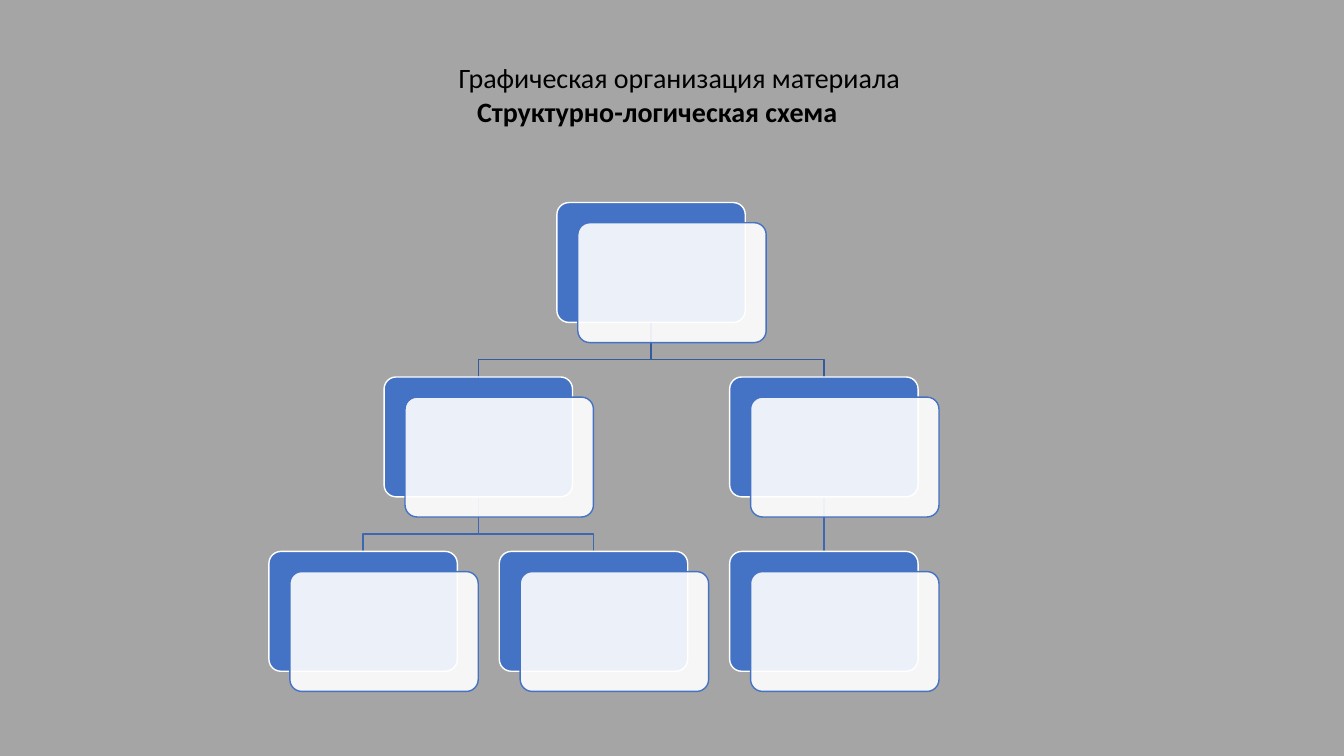
from dataclasses import dataclass

from lxml import etree
from pptx import Presentation
from pptx.dml.color import RGBColor
from pptx.enum.shapes import MSO_CONNECTOR, MSO_SHAPE
from pptx.enum.text import MSO_ANCHOR, PP_ALIGN
from pptx.oxml.ns import qn
from pptx.shapes.autoshape import Shape
from pptx.shapes.connector import Connector
from pptx.slide import Slide
from pptx.util import Pt

ROUNDED = MSO_SHAPE.ROUNDED_RECTANGLE
STRAIGHT = MSO_CONNECTOR.STRAIGHT
CENTER = PP_ALIGN.CENTER
TOP = MSO_ANCHOR.TOP

GREY = RGBColor(0xA5, 0xA5, 0xA5)
BLACK = RGBColor(0x00, 0x00, 0x00)
WHITE = RGBColor(0xFF, 0xFF, 0xFF)
BLUE = RGBColor(0x44, 0x72, 0xC4)
UPPER_LINK = RGBColor(0x36, 0x5B, 0x9D)
LOWER_LINK = RGBColor(0x3E, 0x67, 0xB2)

TREE_LEFT, TREE_TOP = 192.1, 144.7
COLUMN_STEP, ROW_STEP = 164.55, 124.6
NODE_WIDTH, NODE_HEIGHT = 134.6, 85.6
CARD_DX, CARD_DY = 14.95, 14.4
BEND_DROP = 26.5
LINE_WIDTH = Pt(1)
BOTTOM_SITE, TOP_SITE = 2, 0
BACK_INDEX = 2

TITLE_FONT = {"name": "Calibri", "size": Pt(20)}
TITLE_LINES = (
    ("\tГрафическая организация материала ", False),
    ("Структурно-логическая схема", True),
)


@dataclass(frozen=True)
class Node:
    """A place in the tree; column may be fractional."""
    column: float
    row: int

    @property
    def left(self) -> float:
        return TREE_LEFT + self.column * COLUMN_STEP

    @property
    def top(self) -> float:
        return TREE_TOP + self.row * ROW_STEP

    @property
    def middle(self) -> float:
        return self.left + NODE_WIDTH / 2

    @property
    def bottom(self) -> float:
        return self.top + NODE_HEIGHT


@dataclass(frozen=True)
class Link:
    parent: Node
    child: Node
    color: RGBColor


ROOT = Node(1.25, 0)
LEFT_BRANCH, RIGHT_BRANCH = Node(0.5, 1), Node(2, 1)
LEAVES = [Node(column, 2) for column in range(3)]
NODES = [ROOT, LEFT_BRANCH, RIGHT_BRANCH, *LEAVES]
LINKS = [
    Link(ROOT, LEFT_BRANCH, UPPER_LINK),
    Link(LEFT_BRANCH, LEAVES[0], LOWER_LINK),
    Link(LEFT_BRANCH, LEAVES[1], LOWER_LINK),
    Link(ROOT, RIGHT_BRANCH, UPPER_LINK),
    Link(RIGHT_BRANCH, LEAVES[2], LOWER_LINK),
]


def add_title(slide: Slide) -> None:
    title = slide.shapes.add_textbox(Pt(157), Pt(43.2), Pt(625), Pt(48.2))
    frame = title.text_frame
    layout = {"margin_left": 0, "margin_top": 0, "margin_right": 0,
              "margin_bottom": 0, "word_wrap": True, "vertical_anchor": TOP}
    for attribute, value in layout.items():
        setattr(frame, attribute, value)
    for index, (wording, bold) in enumerate(TITLE_LINES):
        paragraph = frame.add_paragraph() if index else frame.paragraphs[0]
        paragraph.alignment = CENTER
        run = paragraph.add_run()
        run.text = wording
        for attribute, value in {**TITLE_FONT, "bold": bold}.items():
            setattr(run.font, attribute, value)
        run.font.color.rgb = BLACK


def add_rounded(slide: Slide, left: float, top: float,
                fill: RGBColor, outline: RGBColor) -> Shape:
    box = slide.shapes.add_shape(
        ROUNDED, Pt(left), Pt(top), Pt(NODE_WIDTH), Pt(NODE_HEIGHT))
    box.adjustments[0] = 0.1
    box.shadow.inherit = False
    box.fill.solid()
    box.fill.fore_color.rgb = fill
    box.line.color.rgb = outline
    box.line.width = LINE_WIDTH
    return box


def add_node(slide: Slide, node: Node) -> Shape:
    """Draw a blue plate with a translucent card over it; return the plate."""
    plate = add_rounded(slide, node.left, node.top, BLUE, WHITE)
    card = add_rounded(
        slide, node.left + CARD_DX, node.top + CARD_DY, WHITE, BLUE)
    fill_color = card.element.spPr.find(qn("a:solidFill")).find(qn("a:srgbClr"))
    etree.SubElement(fill_color, qn("a:alpha"), val="90000")
    return plate


def add_straight_link(slide: Slide, link: Link,
                      plates: dict[Node, Shape]) -> Connector:
    connector = slide.shapes.add_connector(
        STRAIGHT, Pt(link.parent.middle), Pt(link.parent.bottom),
        Pt(link.child.middle), Pt(link.child.top))
    connector.begin_connect(plates[link.parent], BOTTOM_SITE)
    connector.end_connect(plates[link.child], TOP_SITE)
    etree.SubElement(connector.element.spPr, qn("a:effectLst"))
    return connector


def add_bent_link(slide: Slide, link: Link) -> Shape:
    start, end = link.parent.middle, link.child.middle
    bend = link.parent.bottom + BEND_DROP
    builder = slide.shapes.build_freeform(Pt(start), Pt(link.parent.bottom))
    corners = [(start, bend), (end, bend), (end, link.child.top)]
    builder.add_line_segments([(Pt(x), Pt(y)) for x, y in corners], close=False)
    outline = builder.convert_to_shape()
    outline.fill.background()
    outline.shadow.inherit = False
    return outline


def add_link(slide: Slide, link: Link, plates: dict[Node, Shape]) -> None:
    """Join two nodes with a line placed behind every node."""
    if link.parent.column == link.child.column:
        line = add_straight_link(slide, link, plates)
    else:
        line = add_bent_link(slide, link)
    line.line.color.rgb = link.color
    line.line.width = LINE_WIDTH
    slide.shapes.element.insert(BACK_INDEX, line.element)


def main() -> None:
    deck = Presentation()
    deck.slide_width, deck.slide_height = Pt(960), Pt(540)
    slide = deck.slides.add_slide(deck.slide_layouts[6])
    slide.background.fill.solid()
    slide.background.fill.fore_color.rgb = GREY
    add_title(slide)
    plates = {node: add_node(slide, node) for node in NODES}
    for link in LINKS:
        add_link(slide, link, plates)
    deck.save("out.pptx")


if __name__ == "__main__":
    main()
